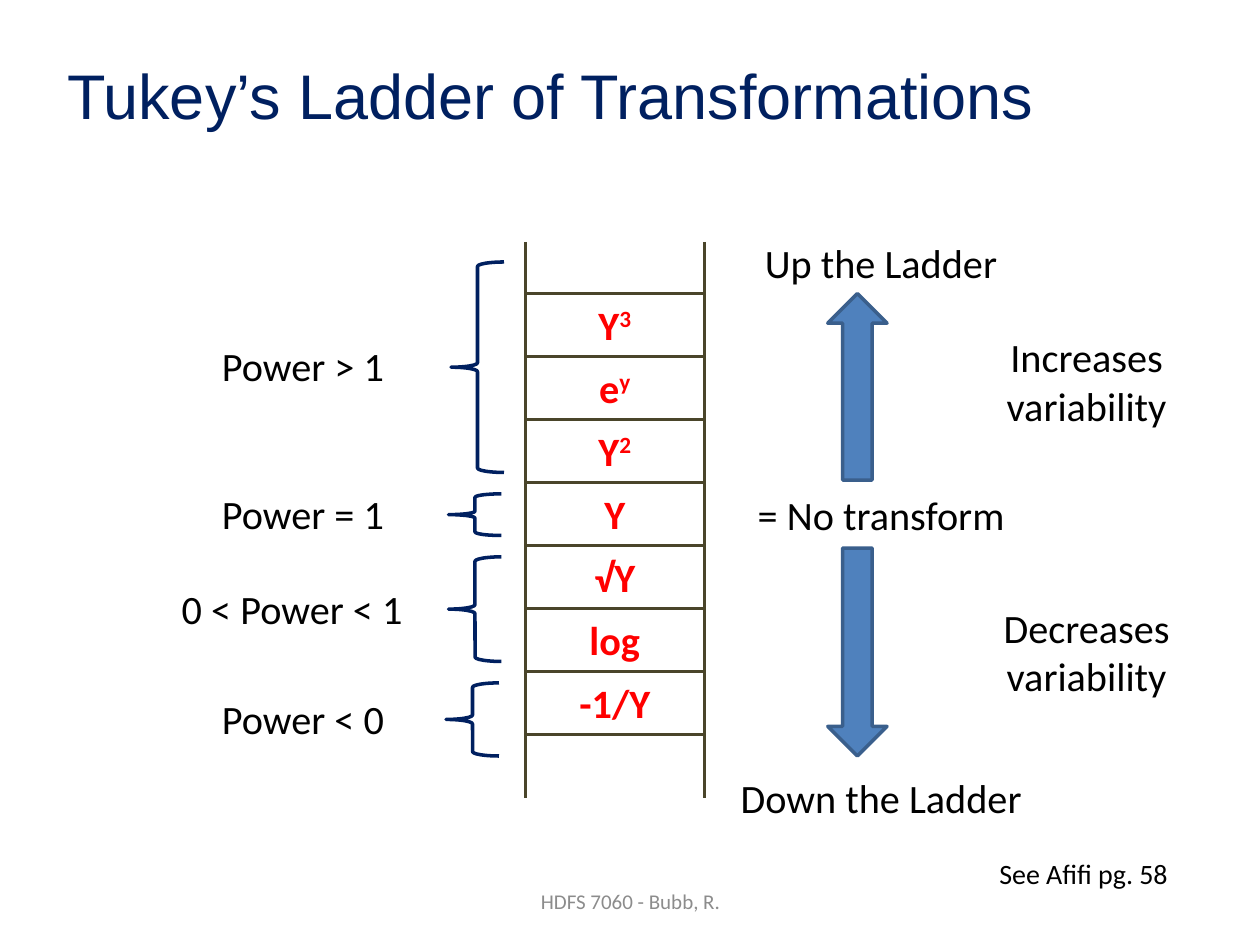
"""Build the slide on Tukey's ladder of transformations."""
from dataclasses import dataclass

from pptx import Presentation
from pptx.dml.color import RGBColor
from pptx.enum.shapes import MSO_CONNECTOR, MSO_SHAPE
from pptx.enum.text import MSO_ANCHOR, PP_ALIGN
from pptx.oxml.ns import qn
from pptx.slide import Slide
from pptx.util import Inches, Pt
from lxml import etree

STRAIGHT = MSO_CONNECTOR.STRAIGHT
BRACE, UP, DOWN = MSO_SHAPE.LEFT_BRACE, MSO_SHAPE.UP_ARROW, MSO_SHAPE.DOWN_ARROW
CENTER = PP_ALIGN.CENTER
TOP, MIDDLE = MSO_ANCHOR.TOP, MSO_ANCHOR.MIDDLE


@dataclass(frozen=True)
class Theme:
    navy: str = "002060"
    wood: str = "4A452A"
    red: str = "FF0000"
    black: str = "000000"
    gray: str = "8C8C8C"
    blue: str = "4F81BD"
    blue_edge: str = "3A5F8C"
    title_font: str = "Arial"
    body_font: str = "Calibri"
    title_size: int = 36
    body_size: int = 23
    note_size: int = 16
    footer_size: int = 12
    stroke: int = 2


THEME = Theme()


@dataclass(frozen=True)
class Area:
    left: float
    top: float
    width: float
    height: float

    def lengths(self) -> list[int]:
        return [Inches(v) for v in (self.left, self.top, self.width, self.height)]


@dataclass(frozen=True)
class Label:
    text: str
    area: Area


@dataclass(frozen=True)
class Rung:
    base: str
    power: str = ""


@dataclass(frozen=True)
class Figure:
    kind: int
    area: Area
    edge: str
    fill: str = ""


RAIL_LEFT, RAIL_RIGHT = 4.17, 5.59
RAIL_TOP, RAIL_BOTTOM = 1.92, 6.33
RUNG_TOP, RUNG_GAP = 2.33, 0.5
LINE_HEIGHT, PAIR_HEIGHT = 0.49, 0.88

RUNGS = [Rung("Y", "3"), Rung("e", "y"), Rung("Y", "2"), Rung("Y"),
         Rung("√Y"), Rung("log"), Rung("-1/Y")]

LABELS = [
    Label("Power > 1", Area(1.5, 2.66, 1.81, LINE_HEIGHT)),
    Label("Power = 1", Area(1.5, 3.83, 1.81, LINE_HEIGHT)),
    Label("0 < Power < 1", Area(1.33, 4.59, 1.98, LINE_HEIGHT)),
    Label("Power < 0", Area(1.5, 5.46, 1.81, LINE_HEIGHT)),
    Label("= No transform", Area(5.83, 3.84, 2.33, LINE_HEIGHT)),
    Label("Up the Ladder", Area(5.83, 1.84, 2.33, LINE_HEIGHT)),
    Label("Down the Ladder", Area(5.74, 6.09, 2.51, LINE_HEIGHT)),
    Label("Increases variability", Area(7.75, 2.59, 1.75, PAIR_HEIGHT)),
    Label("Decreases variability", Area(7.75, 4.74, 1.75, PAIR_HEIGHT)),
]

FIGURES = [
    Figure(BRACE, Area(3.58, 2.08, 0.42, 1.67), THEME.navy),
    Figure(BRACE, Area(3.56, 3.92, 0.42, 0.33), THEME.navy),
    Figure(BRACE, Area(3.56, 4.42, 0.42, 0.83), THEME.navy),
    Figure(BRACE, Area(3.54, 5.42, 0.42, 0.58), THEME.navy),
    Figure(UP, Area(6.57, 2.33, 0.47, 1.48), THEME.blue_edge, THEME.blue),
    Figure(DOWN, Area(6.57, 4.35, 0.47, 1.65), THEME.blue_edge, THEME.blue),
]


def add_text(page: Slide, text: str, area: Area, *, power: str = "",
             size: int = THEME.body_size, color: str = THEME.black,
             font: str = THEME.body_font, bold: bool = False,
             anchor: MSO_ANCHOR = TOP) -> None:
    """Place centred text, with an optional superscript."""
    frame = page.shapes.add_textbox(*area.lengths()).text_frame
    frame.word_wrap = True
    frame.vertical_anchor = anchor
    para = frame.paragraphs[0]
    para.alignment = CENTER
    for part in filter(None, (text, power)):
        span = para.add_run()
        span.text = part
        span.font.name = font
        span.font.size = Pt(size)
        span.font.bold = bold
        span.font.color.rgb = RGBColor.from_string(color)
    if power:
        span._r.get_or_add_rPr().set("baseline", "30000")


def add_line(page: Slide, x1: float, y1: float, x2: float, y2: float) -> None:
    """Draw one straight piece of the ladder."""
    line = page.shapes.add_connector(
        STRAIGHT, Inches(x1), Inches(y1), Inches(x2), Inches(y2))
    line.line.color.rgb = RGBColor.from_string(THEME.wood)
    line.line.width = Pt(THEME.stroke)
    etree.SubElement(line._element.spPr, qn("a:effectLst"))


def add_figure(page: Slide, figure: Figure) -> None:
    """Draw a brace or a block arrow."""
    shape = page.shapes.add_shape(figure.kind, *figure.area.lengths())
    shape.shadow.inherit = False
    shape.line.color.rgb = RGBColor.from_string(figure.edge)
    shape.line.width = Pt(THEME.stroke)
    if figure.fill:
        shape.fill.solid()
        shape.fill.fore_color.rgb = RGBColor.from_string(figure.fill)
    else:
        shape.fill.background()


def add_ladder(page: Slide) -> None:
    """Draw the rails, the rungs and the transformation on each step."""
    for x in (RAIL_LEFT, RAIL_RIGHT):
        add_line(page, x, RAIL_TOP, x, RAIL_BOTTOM)
    for index in range(len(RUNGS) + 1):
        y = RUNG_TOP + index * RUNG_GAP
        add_line(page, RAIL_LEFT, y, RAIL_RIGHT, y)
    for index, rung in enumerate(RUNGS):
        area = Area(4.18, RUNG_TOP + index * RUNG_GAP, 1.4, LINE_HEIGHT)
        add_text(page, rung.base, area, power=rung.power, color=THEME.red, bold=True)


def main() -> None:
    """Build and save the deck."""
    deck = Presentation()
    deck.slide_width, deck.slide_height = Inches(10), Inches(7.5)
    page = deck.slides.add_slide(deck.slide_layouts[6])
    add_text(page, "Tukey’s Ladder of Transformations", Area(0.08, 0.25, 8.58, 1),
             size=THEME.title_size, color=THEME.navy, font=THEME.title_font,
             anchor=MIDDLE)
    add_text(page, "HDFS 7060 - Bubb, R.", Area(3.42, 6.95, 3.17, 0.4),
             size=THEME.footer_size, color=THEME.gray, anchor=MIDDLE)
    add_ladder(page)
    for figure in FIGURES:
        add_figure(page, figure)
    for label in LABELS:
        add_text(page, label.text, label.area)
    add_text(page, "See Afifi pg. 58 ", Area(7.37, 6.75, 2.51, 0.37),
             size=THEME.note_size)
    deck.save("out.pptx")


if __name__ == "__main__":
    main()
